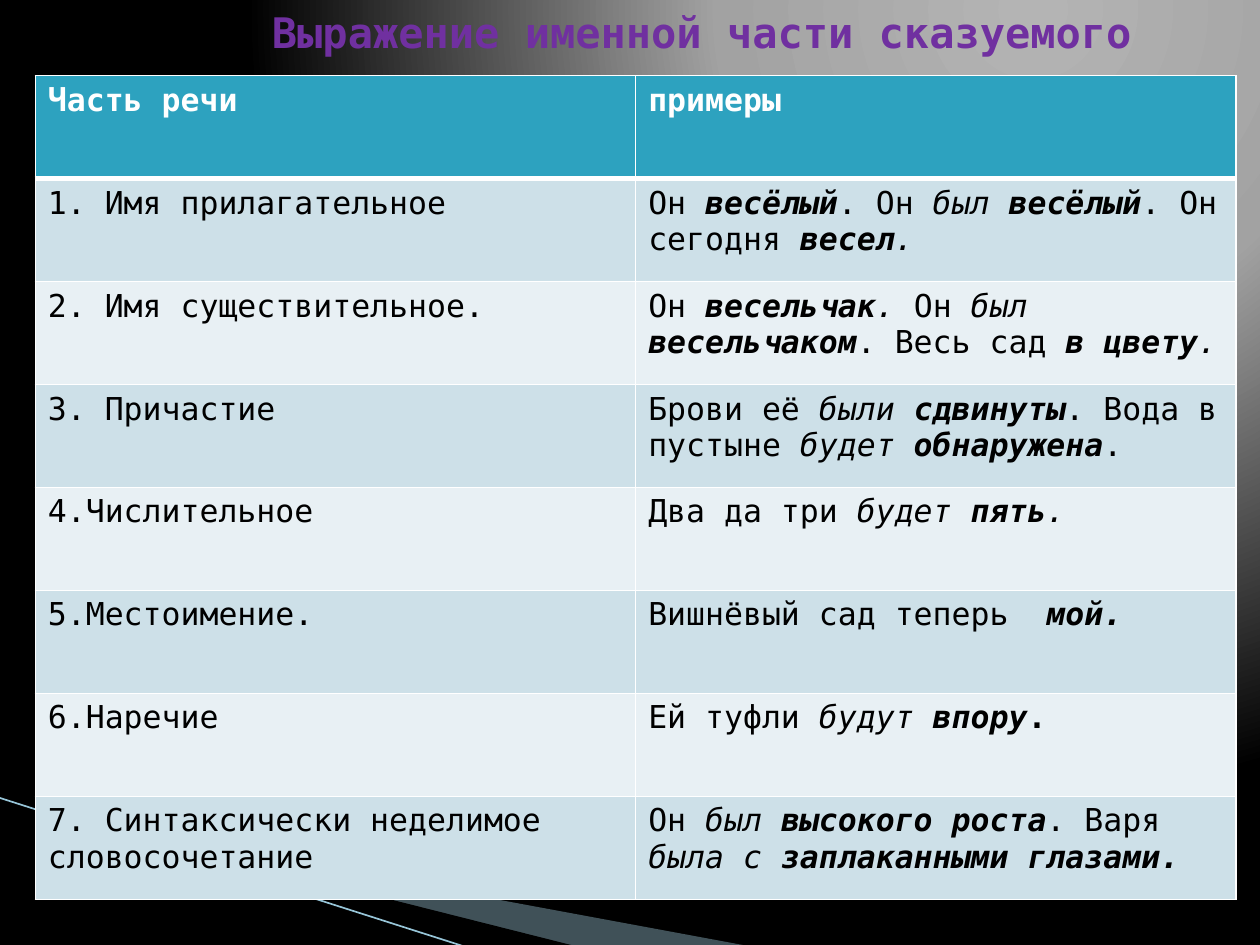
from lxml.etree import SubElement
from pptx import Presentation
from pptx.dml.color import RGBColor
from pptx.enum.shapes import MSO_CONNECTOR
from pptx.enum.text import MSO_AUTO_SIZE, PP_ALIGN
from pptx.oxml import parse_xml
from pptx.oxml.ns import nsdecls, qn
from pptx.util import Inches, Pt

FONT = "DejaVu Sans Mono"
TITLE = "*Выражение именной части сказуемого*"
ROWS = [
    ("*Часть речи*", "*примеры*"),
    ("1. Имя прилагательное",
     "Он _*весёлый*_. Он _был *весёлый*_. Он сегодня _*весел*._"),
    ("2. Имя существительное.",
     "Он _*весельчак*. _Он _был *весельчаком*_. Весь сад _*в цвету*._"),
    ("3. Причастие",
     "Брови её _были *сдвинуты*_. Вода в пустыне _будет *обнаружена*_."),
    ("4.Числительное", "Два да три _будет *пять*._"),
    ("5.Местоимение.", "Вишнёвый сад теперь  _*мой.*_"),
    ("6.Наречие", "Ей туфли _будут *впору*_*.*"),
    ("7. Синтаксически неделимое словосочетание",
     "Он _был *высокого роста*_. Варя _была с *заплаканными глазами.*_"),
]


def paint(target, color):
    """Give a fill a solid colour."""
    target.solid()
    target.fore_color.rgb = RGBColor.from_string(color)


def write(frame, text, size=18, color="000000", align=PP_ALIGN.LEFT):
    """Write text in which _ marks italic and * marks bold."""
    para = frame.paragraphs[0]
    para.alignment = align
    for i, slant in enumerate(text.split("_")):
        for j, part in enumerate(slant.split("*")):
            if part:
                run = para.add_run()
                run.text = part
                font = run.font
                font.name, font.size = FONT, Pt(size)
                font.bold, font.italic = j % 2 == 1, i % 2 == 1
                paint(font.fill, color)


def shade(slide, stops):
    """Fill the background with a round gradient."""
    marks = "".join(
        f'<a:gs pos="{place * 1000}"><a:srgbClr val="{color}"/></a:gs>'
        for place, color in stops)
    slide.background.fill.solid()
    props = slide.background._cSld.bg.bgPr
    grad = parse_xml(
        f'<a:gradFill {nsdecls("a")} rotWithShape="1"><a:gsLst>{marks}</a:gsLst>'
        '<a:path path="circle"><a:fillToRect l="65000" b="98000"/></a:path>'
        '</a:gradFill>')
    props.replace(props.find(qn("a:solidFill")), grad)


def blade(slide, points, color, alpha=100):
    """Draw a filled outline through points in inches."""
    start, *rest = [(Inches(x), Inches(y)) for x, y in points]
    form = slide.shapes.build_freeform(*start)
    form.add_line_segments(rest, close=True)
    shape = form.convert_to_shape()
    shape.shadow.inherit = False
    shape.line.fill.background()
    paint(shape.fill, color)
    tone = shape.fill._xPr.find(qn("a:solidFill"))[0]
    SubElement(tone, qn("a:alpha"), val=str(alpha * 1000))


def streak(slide, start, end, color, width):
    """Draw a thin straight line."""
    line = slide.shapes.add_connector(
        MSO_CONNECTOR.STRAIGHT, *[Inches(v) for v in start + end])
    paint(line.line.fill, color)
    line.line.width = Pt(width)
    SubElement(line._element.spPr, qn("a:effectLst"))


def edge(cell, widths):
    """Give a cell white borders of the given widths."""
    props = cell._tc.get_or_add_tcPr()
    for place, (side, width) in enumerate(widths.items()):
        props.insert(place, parse_xml(
            f'<a:ln{side} {nsdecls("a")} w="{Pt(width)}"><a:solidFill>'
            f'<a:srgbClr val="FFFFFF"/></a:solidFill></a:ln{side}>'))


def grid(slide, rows):
    """Add the table of parts of speech and examples."""
    table = slide.shapes.add_table(
        len(rows), 2, Inches(0.28), Inches(0.6), Inches(9.53), Inches(6.54)).table
    for i, texts in enumerate(rows):
        head = i == 0
        fill = "2DA2BF" if head else ("E8F0F4", "CDE0E8")[i % 2]
        top = 3 if i == 1 else 1
        for j, text in enumerate(texts):
            cell = table.cell(i, j)
            paint(cell.fill, fill)
            edge(cell, {"L": 1, "R": 1, "T": top, "B": 3 if head else 1})
            write(cell.text_frame, text, color="FFFFFF" if head else "000000")


def title(slide, text):
    """Add the heading above the table."""
    box = slide.shapes.add_textbox(Inches(1.14), 0, Inches(8.86), Inches(0.5))
    frame = box.text_frame
    frame.word_wrap = True
    frame.auto_size = MSO_AUTO_SIZE.SHAPE_TO_FIT_TEXT
    write(frame, text, size=24, color="7030A0", align=PP_ALIGN.CENTER)


def main():
    """Build and save the slide."""
    deck = Presentation()
    deck.slide_width, deck.slide_height = Inches(10), Inches(7.5)
    slide = deck.slides.add_slide(deck.slide_layouts[6])
    shade(slide, [(0, "B4B4B4"), (40, "A2A2A2"), (100, "000000")])
    blade(slide, [(0.55, 6.51), (5.95, 7.51), (4.56, 7.51), (0.55, 6.5)],
          "A0CBDC", alpha=40)
    blade(slide, [(0.53, 6.49), (4.57, 7.51), (3.72, 7.52), (0.54, 6.5)], "000000")
    streak(slide, (-0.01, 6.33), (3.71, 7.52), "97C5D8", 0.95)
    grid(slide, ROWS)
    title(slide, TITLE)
    deck.save("out.pptx")


if __name__ == "__main__":
    main()
